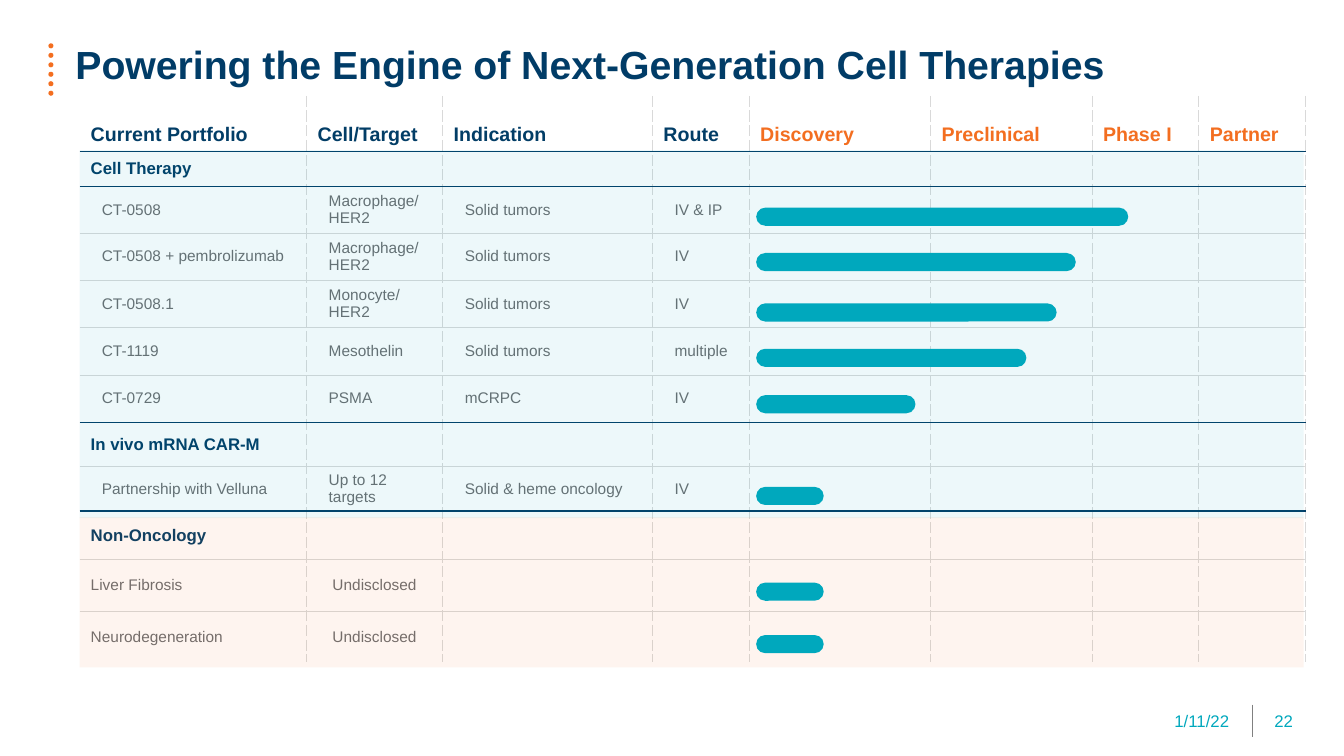
from lxml import etree
from pptx import Presentation
from pptx.dml.color import RGBColor
from pptx.enum.shapes import MSO_CONNECTOR, MSO_SHAPE
from pptx.enum.text import MSO_ANCHOR, PP_ALIGN
from pptx.oxml.ns import qn
from pptx.util import Inches, Pt

OVAL, RECTANGLE, ROUNDED = MSO_SHAPE.OVAL, MSO_SHAPE.RECTANGLE, MSO_SHAPE.ROUNDED_RECTANGLE
STRAIGHT = MSO_CONNECTOR.STRAIGHT
TOP, MIDDLE, BOTTOM = MSO_ANCHOR.TOP, MSO_ANCHOR.MIDDLE, MSO_ANCHOR.BOTTOM
LEFT, CENTER, RIGHT = PP_ALIGN.LEFT, PP_ALIGN.CENTER, PP_ALIGN.RIGHT
NAVY, ORANGE, TEAL, GRAY, RULE = "023D66", "F36E20", "00A8BD", "6C6D70", "D9D9D9"
NO_STYLE = "{2D5ABB26-0587-4C30-8999-92F81FD0307C}"


def write(frame, text, size=11, color=GRAY, bold=False, align=LEFT, indent=0, spacing=1.0):
    """Fill a text frame, one paragraph per line of text."""
    frame.word_wrap = True
    for number, line in enumerate(text.split("\n")):
        para = frame.add_paragraph() if number else frame.paragraphs[0]
        para.alignment, para.line_spacing = align, spacing
        if indent:
            para._p.get_or_add_pPr().set("marL", str(Inches(indent)))
        span = para.add_run()
        span.text = line
        span.font.name, span.font.size, span.font.bold = "Arial", Pt(size), bold
        span.font.color.rgb = RGBColor.from_string(color)


def add_filled(kind, left, top, width, height, color, opacity=100):
    shape = page.shapes.add_shape(kind, Inches(left), Inches(top), Inches(width), Inches(height))
    shape.shadow.inherit = False
    shape.fill.solid()
    shape.fill.fore_color.rgb = RGBColor.from_string(color)
    shape.line.fill.background()
    if opacity < 100:
        tint = shape._element.spPr.find(qn("a:solidFill"))[0]
        etree.SubElement(tint, qn("a:alpha"), val=str(opacity * 1000))
    return shape


deck = Presentation()
deck.slide_width, deck.slide_height = Inches(13.33), Inches(7.5)
page = deck.slides.add_slide(deck.slide_layouts[6])

# Title marker and footer divider
for dot in range(6):
    add_filled(OVAL, 0.48, 0.43 + 0.094 * dot, 0.05, 0.05, ORANGE)
divider = page.shapes.add_connector(STRAIGHT, Inches(12.42), Inches(6.99), Inches(12.42), Inches(7.31))
divider.line.color.rgb = RGBColor.from_string("808080")
divider.line.width = Pt(0.5)
etree.SubElement(divider._element.spPr, qn("a:effectLst"))

# Portfolio table
column_widths = [2.25, 1.35, 2.08, 0.96, 1.8, 1.6, 1.06, 1.06]
portfolio = [
    (0.55, ["Current Portfolio", "Cell/Target", "Indication", "Route",
            "Discovery", "Preclinical", "Phase I", "Partner"]),
    (0.35, ["Cell Therapy"]),
    (0.46, ["CT-0508", "Macrophage/\nHER2", "Solid tumors", "IV & IP"]),
    (0.47, ["CT-0508 + pembrolizumab", "Macrophage/\nHER2", "Solid tumors", "IV"]),
    (0.47, ["CT-0508.1", "Monocyte/\nHER2", "Solid tumors", "IV"]),
    (0.47, ["CT-1119", "Mesothelin", "Solid tumors", "multiple"]),
    (0.47, ["CT-0729", "PSMA", "mCRPC", "IV"]),
    (0.44, ["In vivo mRNA CAR-M"]),
    (0.44, ["Partnership with Velluna", "Up to 12 targets", "Solid & heme oncology", "IV"]),
    (0.48, ["Non-Oncology"]),
    (0.52, ["Liver Fibrosis", "Undisclosed"]),
    (0.5, ["Neurodegeneration", "Undisclosed"]),
]
last_row, last_column = len(portfolio) - 1, len(column_widths) - 1
first_undisclosed = 10
navy_below = {0, 1, 6, 8}

table_frame = page.shapes.add_table(
    len(portfolio), len(column_widths), Inches(0.79), Inches(0.95),
    Inches(sum(column_widths)), Inches(sum(height for height, _ in portfolio)))
table = table_frame.table
table.first_row = table.horz_banding = False
table._tbl.tblPr.find(qn("a:tableStyleId")).text = NO_STYLE
for column, width in zip(table.columns, column_widths):
    column.width = Inches(width)

for row, (height, texts) in enumerate(portfolio):
    table.rows[row].height = Inches(height)
    for column in range(len(column_widths)):
        cell = table.cell(row, column)
        cell.margin_left = cell.margin_right = Inches(0.11)
        cell.vertical_anchor = MIDDLE if row else BOTTOM
        cell.fill.background()
        if column >= len(texts):
            etree.SubElement(cell.text_frame.paragraphs[0]._p, qn("a:endParaRPr"), sz="1100")
        elif row == 0:
            write(cell.text_frame, texts[column], size=14, color=ORANGE if column > 3 else NAVY, bold=True)
        elif len(texts) == 1:
            write(cell.text_frame, texts[column], size=12, color=NAVY, bold=True)
        elif row >= first_undisclosed:
            write(cell.text_frame, texts[column], align=CENTER if column else LEFT)
        else:
            write(cell.text_frame, texts[column], indent=0.11)

        borders = [
            ("a:lnL", column > 0, RULE, 0.5, "dash"),
            ("a:lnR", True, RULE, 0.5, "dash"),
            ("a:lnT", row > 0, *((NAVY, 1) if row - 1 in navy_below else (RULE, 0.5)), "solid"),
            ("a:lnB", row < last_row, *((NAVY, 1) if row in navy_below else (RULE, 0.5)), "solid"),
        ]
        properties = cell._tc.get_or_add_tcPr()
        for position, (side, visible, color, weight, dash) in enumerate(borders):
            edge = etree.Element(qn(side), w=str(Pt(weight)))
            properties.insert(position, edge)
            if visible:
                paint = etree.SubElement(edge, qn("a:solidFill"))
                etree.SubElement(paint, qn("a:srgbClr"), val=color)
                etree.SubElement(edge, qn("a:prstDash"), val=dash)
            else:
                etree.SubElement(edge, qn("a:noFill"))

add_filled(RECTANGLE, 0.79, 5.13, 12.14, 1.49, ORANGE, opacity=7)

# Title and footer text
for text, left, top, width, height, anchor, style in [
    ("22", 12.54, 6.95, 0.52, 0.4, MIDDLE, dict(size=12, color=TEAL)),
    ("1/11/22", 9.29, 6.95, 3, 0.4, MIDDLE, dict(size=12, color=TEAL, align=RIGHT)),
    ("Powering the Engine of Next-Generation Cell Therapies", 0.65, 0.4, 11.89, 1.09, TOP,
     dict(size=28, color="013C67", bold=True, spacing=0.9)),
]:
    box = page.shapes.add_textbox(Inches(left), Inches(top), Inches(width), Inches(height))
    box.text_frame.vertical_anchor = anchor
    write(box.text_frame, text, **style)

# Progress bars: top and length
for top, length in [(2.06, 3.69), (2.51, 3.17), (3.01, 2.98), (3.46, 2.68),
                    (3.92, 1.58), (4.83, 0.67), (5.78, 0.67), (6.3, 0.67)]:
    bar = add_filled(ROUNDED, 7.5, top, length, 0.18, TEAL)
    bar.adjustments[0] = 0.5

add_filled(RECTANGLE, 0.79, 1.49, 12.14, 3.65, TEAL, opacity=7)

deck.save("out.pptx")
